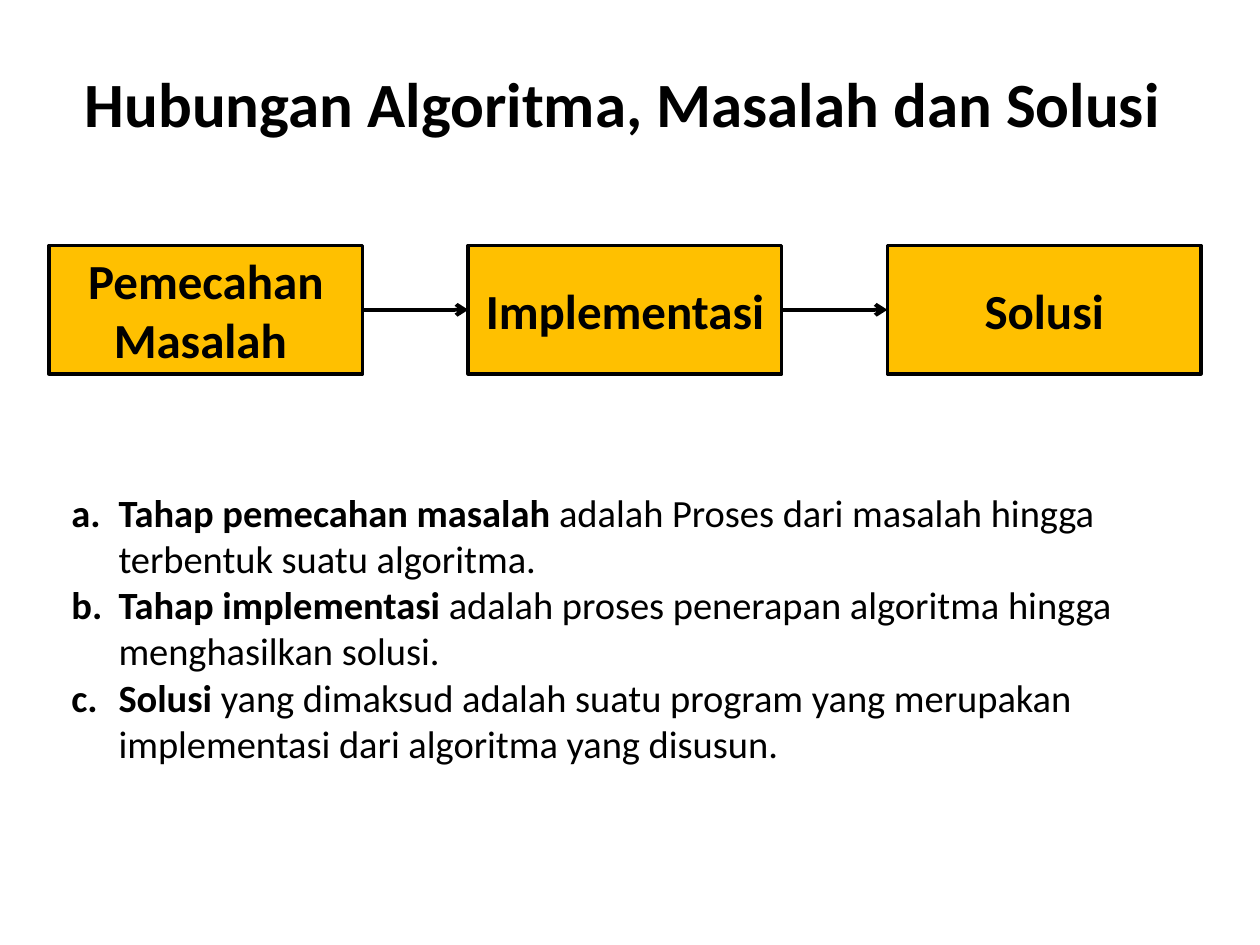
from lxml.etree import SubElement
from pptx import Presentation
from pptx.dml.color import RGBColor
from pptx.enum.shapes import MSO_CONNECTOR, MSO_SHAPE
from pptx.enum.text import MSO_ANCHOR, PP_ALIGN
from pptx.oxml.ns import qn
from pptx.util import Cm, Pt

FONT = "Calibri"
BLACK = "000000"
AMBER = "FFC000"

TITLE = "Hubungan Algoritma, Masalah dan Solusi "
STAGES = ["Pemecahan Masalah ", "Implementasi", "Solusi"]
DEFINITIONS = [
    ("Tahap pemecahan masalah ",
     "adalah Proses dari masalah hingga terbentuk suatu algoritma."),
    ("Tahap implementasi ",
     "adalah proses penerapan algoritma hingga menghasilkan solusi."),
    ("Solusi ",
     "yang dimaksud adalah suatu program yang merupakan implementasi "
     "dari algoritma yang disusun."),
]


def color(hex_code):
    return RGBColor.from_string(hex_code)


def style_font(font, size, bold=None):
    font.name = FONT
    font.size = Pt(size)
    font.bold = bold
    font.color.rgb = color(BLACK)


def write_centered(shape, text, size):
    frame = shape.text_frame
    frame.word_wrap = True
    frame.vertical_anchor = MSO_ANCHOR.MIDDLE
    para = frame.paragraphs[0]
    para.alignment = PP_ALIGN.CENTER
    para.add_run().text = text
    style_font(para.font, size, bold=True)


def add_title(page, left, top, width, height):
    box = page.shapes.add_textbox(Cm(left), Cm(top), Cm(width), Cm(height))
    write_centered(box, TITLE, 36)


def add_stage(page, text, left, top, width, height):
    stage = page.shapes.add_shape(
        MSO_SHAPE.RECTANGLE, Cm(left), Cm(top), Cm(width), Cm(height))
    stage.shadow.inherit = False
    stage.fill.solid()
    stage.fill.fore_color.rgb = color(AMBER)
    stage.line.color.rgb = color(BLACK)
    stage.line.width = Pt(2)
    write_centered(stage, text, 28)
    return stage


def add_arrow(page, source, target):
    """Join the right side of source to the left side of target."""
    arrow = page.shapes.add_connector(MSO_CONNECTOR.STRAIGHT, 0, 0, 0, 0)
    arrow.begin_connect(source, 3)
    arrow.end_connect(target, 1)
    arrow.line.color.rgb = color(BLACK)
    arrow.line.width = Pt(2.25)
    SubElement(arrow.line._get_or_add_ln(), qn("a:tailEnd"), type="arrow")
    SubElement(arrow._element.spPr, qn("a:effectLst"))


def add_flow(page, left, top, width, height):
    stage_width = 6.32
    pitch = (width - stage_width) / (len(STAGES) - 1)
    stages = [add_stage(page, text, left + index * pitch, top, stage_width, height)
              for index, text in enumerate(STAGES)]
    for source, target in zip(stages, stages[1:]):
        add_arrow(page, source, target)


def add_lettering(para, indent):
    """Number the paragraph a., b., c. with a hanging indent."""
    properties = para._p.get_or_add_pPr()
    properties.set("marL", str(Cm(indent)))
    properties.set("indent", str(-Cm(indent)))
    SubElement(properties, qn("a:buFont"), typeface="+mj-lt")
    SubElement(properties, qn("a:buAutoNum"), type="alphaLcPeriod")


def add_definitions(page, left, top, width, height):
    box = page.shapes.add_textbox(Cm(left), Cm(top), Cm(width), Cm(height))
    frame = box.text_frame
    frame.word_wrap = True
    for index, (term, meaning) in enumerate(DEFINITIONS):
        para = frame.add_paragraph() if index else frame.paragraphs[0]
        add_lettering(para, 0.95)
        style_font(para.font, 22)
        for text, bold in ((term, True), (meaning, False)):
            span = para.add_run()
            span.text = text
            span.font.bold = bold


def main():
    deck = Presentation()
    deck.slide_width, deck.slide_height = Cm(25.4), Cm(19.05)
    page = deck.slides.add_slide(deck.slide_layouts[6])
    add_title(page, 1.27, 0.76, 22.86, 2.62)
    add_flow(page, 0.99, 4.95, 23.22, 2.59)
    add_definitions(page, 1.19, 9.73, 23.22, 5.89)
    deck.save("out.pptx")


if __name__ == "__main__":
    main()
